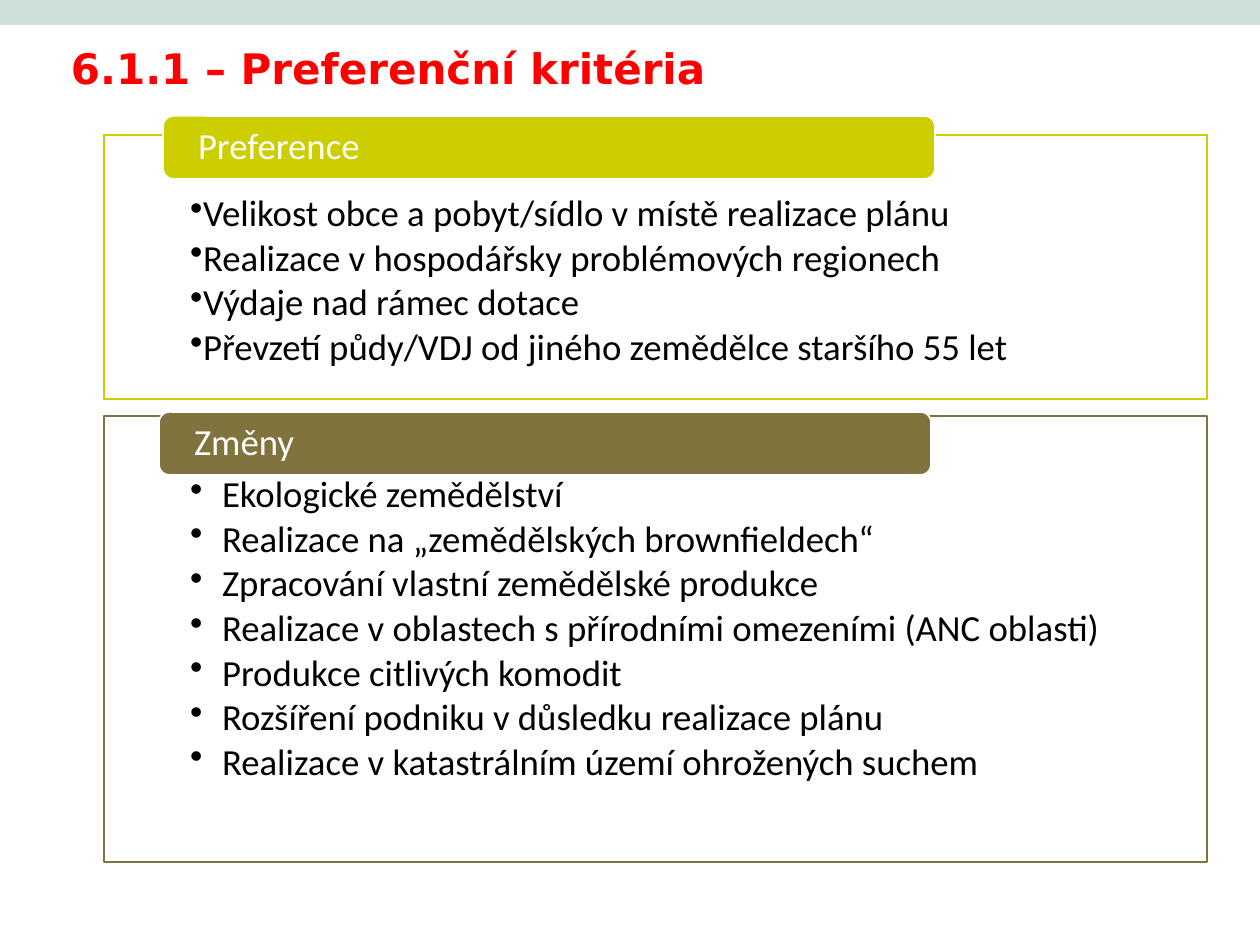
from lxml import etree
from pptx import Presentation, util as u
from pptx.dml.color import RGBColor
from pptx.enum import shapes, text
from pptx.oxml.ns import qn

# Content
TITLE = "6.1.1 – Preferenční kritéria"
PANELS = [
    dict(head="Preference", color="CDCE00", top=135, high=264,
         tab=(163, 116), hang=0, items=[
             "Velikost obce a pobyt/sídlo v místě realizace plánu",
             "Realizace v hospodářsky problémových regionech",
             "Výdaje nad rámec dotace",
             "Převzetí půdy/VDJ od jiného zemědělce staršího 55 let"]),
    dict(head="Změny", color="80733D", top=416, high=446,
         tab=(159, 412), hang=32, items=[
             "Ekologické zemědělství",
             "Realizace na „zemědělských brownfieldech“",
             "Zpracování vlastní zemědělské produkce",
             "Realizace v oblastech s přírodními omezeními (ANC oblasti)",
             "Produkce citlivých komodit",
             "Rozšíření podniku v důsledku realizace plánu",
             "Realizace v katastrálním území ohrožených suchem"]),
]
LEFT, WIDE = 104, 1103
TAB_W, TAB_H = 772, 63


def px(n):
    return u.Emu(round(n * 914400 / 126))


def rgb(code):
    return RGBColor.from_string(code)


def box(kind, area, fill, line=None):
    shape = slide.shapes.add_shape(kind, *map(px, area))
    shape.shadow.inherit = False
    shape.fill.solid()
    shape.fill.fore_color.rgb = rgb(fill)
    if line:
        shape.line.color.rgb = rgb(line)
        shape.line.width = u.Pt(1)
    else:
        shape.line.fill.background()
    return shape


def frame(shape, pads, anchor, wrap=True):
    tf = shape.text_frame
    tf.margin_left, tf.margin_top, tf.margin_right, tf.margin_bottom = map(px, pads)
    tf.vertical_anchor = anchor
    tf.word_wrap = wrap
    return tf


def write(para, words, size, color, font="Calibri", bold=False):
    para.alignment = text.PP_ALIGN.LEFT
    run = para.add_run()
    run.text = words
    run.font.size = u.Pt(size)
    run.font.name = font
    run.font.bold = bold
    run.font.color.rgb = rgb(color)


def bullet(para, hang):
    props = para._p.get_or_add_pPr()
    props.set("marL", str(px(hang)))
    props.set("indent", str(-px(hang)))
    etree.SubElement(props, qn("a:buChar")).set("char", "•")


prs = Presentation()
prs.slide_width, prs.slide_height = px(1260), px(945)
slide = prs.slides.add_slide(prs.slide_layouts[6])
RECT, ROUND = shapes.MSO_SHAPE.RECTANGLE, shapes.MSO_SHAPE.ROUNDED_RECTANGLE

# Top band and title
box(RECT, (0, 0, 1260, 25), "CCDFD8")
title = slide.shapes.add_textbox(*map(px, (53, 30, 682, 74)))
tf = frame(title, (18, 11, 18, 11), text.MSO_ANCHOR.BOTTOM, wrap=False)
write(tf.paragraphs[0], TITLE, 24, "FF0000", "DejaVu Sans", True)

# Panels, each with a bulleted list and a heading tab
for panel in PANELS:
    body = box(RECT, (LEFT, panel["top"], WIDE, panel["high"]),
               "FFFFFF", panel["color"])
    tone = body.fill._xPr.find(".//" + qn("a:srgbClr"))
    etree.SubElement(tone, qn("a:alpha")).set("val", "90000")
    tf = frame(body, (86, 60, 86, 20), text.MSO_ANCHOR.TOP)
    for i, item in enumerate(panel["items"]):
        para = tf.add_paragraph() if i else tf.paragraphs[0]
        bullet(para, panel["hang"])
        para.line_spacing = 0.9
        para.space_after = u.Pt(2.8)
        write(para, item, 21, "000000")

    tab = box(ROUND, (*panel["tab"], TAB_W, TAB_H), panel["color"], "FFFFFF")
    tf = frame(tab, (32, 0, 32, 0), text.MSO_ANCHOR.MIDDLE)
    tf.paragraphs[0].line_spacing = 0.9
    write(tf.paragraphs[0], panel["head"], 21, "FFFFFF")

prs.save("out.pptx")
